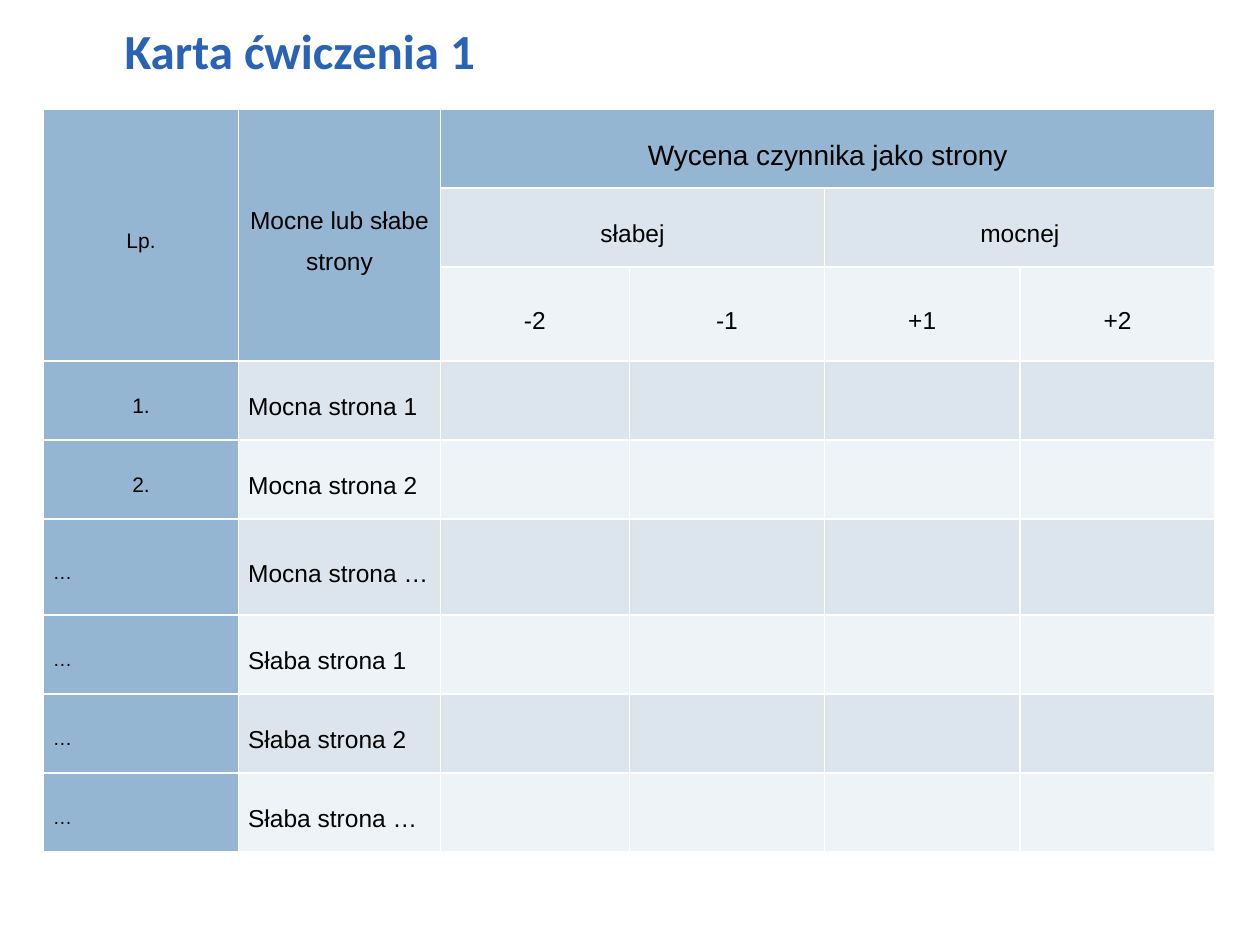
from lxml import etree
from pptx import Presentation
from pptx import util as u
from pptx.dml.color import RGBColor
from pptx.enum import text
from pptx.oxml.ns import qn

COLORS = {
    "title": "2A63B4",
    "header": "94B6D2",
    "dark": "DCE5EE",
    "light": "EEF3F7",
    "border": "FFFFFF",
    "text": "000000",
}
COLUMN_WIDTHS = [111.6, 115.2, 108, 111.6, 111.6, 111.6]
ROW_HEIGHTS = [45.2, 45.2, 53.7, 45.2, 45.2, 54.7, 45.2, 45.2, 45.2]
SCORES = ["-2", "-1", "+1", "+2"]
FACTORS = [
    ("1.", "Mocna strona 1"),
    ("2.", "Mocna strona 2"),
    ("…", "Mocna strona …"),
    ("…", "Słaba strona 1"),
    ("…", "Słaba strona 2"),
    ("…", "Słaba strona …"),
]
HEADER_ROWS = 3


class Worksheet:
    """Holds the style and the current slide."""

    def __init__(self, slide):
        self.slide = slide
        self.title_font = "Calibri"
        self.table_font = "Arial"

    def format_font(self, paragraph, name, size, color, bold=False):
        for run in paragraph.runs:
            run.font.name = name
            run.font.size = u.Pt(size)
            run.font.bold = bold
            run.font.color.rgb = RGBColor.from_string(COLORS[color])

    def title(self, words, left, top, width, height):
        shape = self.slide.shapes.title
        shape.left, shape.top = u.Pt(left), u.Pt(top)
        shape.width, shape.height = u.Pt(width), u.Pt(height)
        frame = shape.text_frame
        frame.text = words
        frame.vertical_anchor = text.MSO_ANCHOR.TOP
        frame.auto_size = text.MSO_AUTO_SIZE.SHAPE_TO_FIT_TEXT
        paragraph = frame.paragraphs[0]
        paragraph.alignment = text.PP_ALIGN.LEFT
        self.format_font(paragraph, self.title_font, 28, "title", bold=True)

    def table(self, left, top, widths, heights):
        """Add an empty table with a header column and banded rows."""
        table = self.slide.shapes.add_table(
            len(heights), len(widths), u.Pt(left), u.Pt(top),
            u.Pt(sum(widths)), u.Pt(sum(heights))).table
        table.first_row = table.horz_banding = False
        for column, width in zip(table.columns, widths):
            column.width = u.Pt(width)
        for index, (row, height) in enumerate(zip(table.rows, heights)):
            row.height = u.Pt(height)
            band = "dark" if index % 2 else "light"
            for position, cell in enumerate(row.cells):
                is_header = (index == 0 or position == 0
                             or (position == 1 and index < HEADER_ROWS))
                self.borders(cell)
                cell.fill.solid()
                cell.fill.fore_color.rgb = RGBColor.from_string(
                    COLORS["header" if is_header else band])
        return table

    def borders(self, cell):
        properties = cell._tc.get_or_add_tcPr()
        for side in ("a:lnL", "a:lnR", "a:lnT", "a:lnB"):
            line = etree.SubElement(properties, qn(side), w=str(u.Pt(1)))
            fill = etree.SubElement(line, qn("a:solidFill"))
            etree.SubElement(fill, qn("a:srgbClr"), val=COLORS["border"])

    def cell_text(self, cell, words, size=14, centred=True):
        cell.text_frame.text = words
        cell.vertical_anchor = text.MSO_ANCHOR.MIDDLE
        cell.margin_left = cell.margin_right = u.Pt(5.4)
        cell.margin_top = cell.margin_bottom = u.Pt(1.44)
        paragraph = cell.text_frame.paragraphs[0]
        paragraph.alignment = (
            text.PP_ALIGN.CENTER if centred else text.PP_ALIGN.LEFT)
        paragraph.line_spacing = 1.5
        paragraph.space_after = u.Pt(10)
        self.format_font(paragraph, self.table_font, size, "text")


def main():
    presentation = Presentation()
    presentation.slide_width, presentation.slide_height = u.Pt(720), u.Pt(540)
    slide = presentation.slides.add_slide(presentation.slide_layouts[5])
    sheet = Worksheet(slide)
    sheet.title("Karta ćwiczenia 1", 64, 8, 572.4, 41)

    table = sheet.table(24.8, 62.2, COLUMN_WIDTHS, ROW_HEIGHTS)
    headings = [
        ((0, 0), (2, 0), "Lp.", 12),
        ((0, 1), (2, 1), "Mocne lub słabe strony", 14),
        ((0, 2), (0, 5), "Wycena czynnika jako strony", 16),
        ((1, 2), (1, 3), "słabej", 14),
        ((1, 4), (1, 5), "mocnej", 14),
    ]
    for first, last, words, size in headings:
        table.cell(*first).merge(table.cell(*last))
        sheet.cell_text(table.cell(*first), words, size)
    for column, score in enumerate(SCORES, start=2):
        sheet.cell_text(table.cell(2, column), score)
    for row, (number, factor) in enumerate(FACTORS, start=HEADER_ROWS):
        numbered = number != "…"
        sheet.cell_text(table.cell(row, 0), number,
                        12 if numbered else 11, centred=numbered)
        sheet.cell_text(table.cell(row, 1), factor, centred=False)

    presentation.save("out.pptx")


if __name__ == "__main__":
    main()
